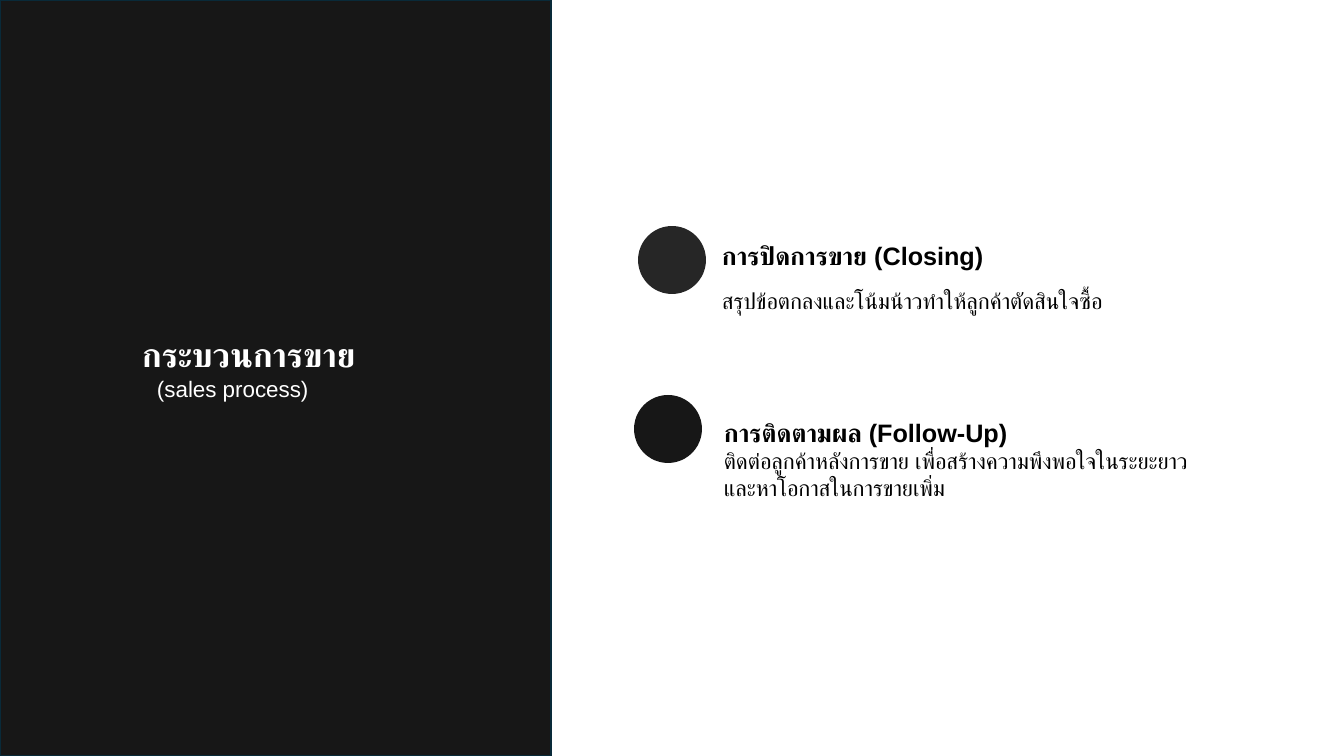
from lxml.etree import SubElement
from pptx import Presentation
from pptx.dml.color import RGBColor
from pptx.enum.shapes import MSO_SHAPE
from pptx.enum.text import MSO_ANCHOR, MSO_AUTO_SIZE, PP_ALIGN
from pptx.oxml.ns import qn
from pptx.util import Emu, Pt

SCALE = 914400 / 100.8
WIDTH, HEIGHT = 1344, 756
PANEL_WIDTH = 551
CIRCLE_SIZE = 68
FONT = "Arial"
COLORS = {
    "panel": "171717",
    "panel_line": "092A39",
    "closing": "262626",
    "follow_up": "171717",
    "text": "000000",
    "title": "FFFFFF",
}


def px(length):
    return Emu(round(length * SCALE))


def color(name):
    return RGBColor.from_string(COLORS[name])


def add_block(slide, kind, left, top, width, height, fill, line=None):
    shape = slide.shapes.add_shape(kind, px(left), px(top), px(width), px(height))
    shape.shadow.inherit = False
    shape.fill.solid()
    shape.fill.fore_color.rgb = color(fill)
    if line:
        shape.line.color.rgb = color(line)
        shape.line.width = Pt(1.5)
    else:
        shape.line.fill.background()


def write(paragraph, text, size=16, bold=False, fill="text", indent=0,
          line=None, before=0, after=0):
    paragraph.alignment = PP_ALIGN.LEFT
    paragraph.space_before, paragraph.space_after = Pt(before), Pt(after)
    if line:
        paragraph.line_spacing = Pt(line)
    if indent:
        paragraph._p.get_or_add_pPr().set("marL", str(px(indent)))
    run = paragraph.add_run()
    run.text = text
    run.font.size, run.font.bold, run.font.name = Pt(size), bold, FONT
    run.font.color.rgb = color(fill)
    SubElement(run.font._element, qn("a:cs"), typeface=FONT)


def add_title(slide, title, subtitle):
    shape = slide.shapes.title
    shape.left, shape.top = px(142), px(333)
    shape.width, shape.height = px(PANEL_WIDTH - 142), px(70)
    frame = shape.text_frame
    frame.margin_left = frame.margin_right = frame.margin_top = frame.margin_bottom = 0
    frame.vertical_anchor = MSO_ANCHOR.MIDDLE
    frame.auto_size = MSO_AUTO_SIZE.NONE
    write(frame.paragraphs[0], title, size=24, bold=True, fill="title")
    write(frame.add_paragraph(), subtitle, fill="title", indent=15)


def add_step(slide, left, top, height, heading, lines, **spacing):
    box = slide.shapes.add_textbox(px(left), px(top), px(WIDTH - left), px(height))
    frame = box.text_frame
    frame.word_wrap = True
    write(frame.paragraphs[0], heading, size=18, bold=True, **spacing)
    for text in lines:
        write(frame.add_paragraph(), text, **spacing)


def main():
    presentation = Presentation()
    presentation.slide_width, presentation.slide_height = px(WIDTH), px(HEIGHT)
    slide = presentation.slides.add_slide(presentation.slide_layouts[5])

    add_block(slide, MSO_SHAPE.RECTANGLE, 0, 0, PANEL_WIDTH, HEIGHT, "panel", "panel_line")
    title = slide.shapes.title._element
    title.getparent().append(title)
    add_title(slide, "กระบวนการขาย", "(sales process)")

    for left, top, fill in ((638, 226, "closing"), (634, 395, "follow_up")):
        add_block(slide, MSO_SHAPE.OVAL, left, top, CIRCLE_SIZE, CIRCLE_SIZE, fill)

    add_step(slide, 712, 240, 82, "การปิดการขาย (Closing)",
             ["สรุปข้อตกลงและโน้มน้าวทำให้ลูกค้าตัดสินใจซื้อ"],
             line=18, before=7.5, after=6)
    add_step(slide, 714, 412, 95, "การติดตามผล (Follow-Up)",
             ["ติดต่อลูกค้าหลังการขาย เพื่อสร้างความพึงพอใจในระยะยาว",
              "และหาโอกาสในการขายเพิ่ม"])

    presentation.save("out.pptx")


if __name__ == "__main__":
    main()
